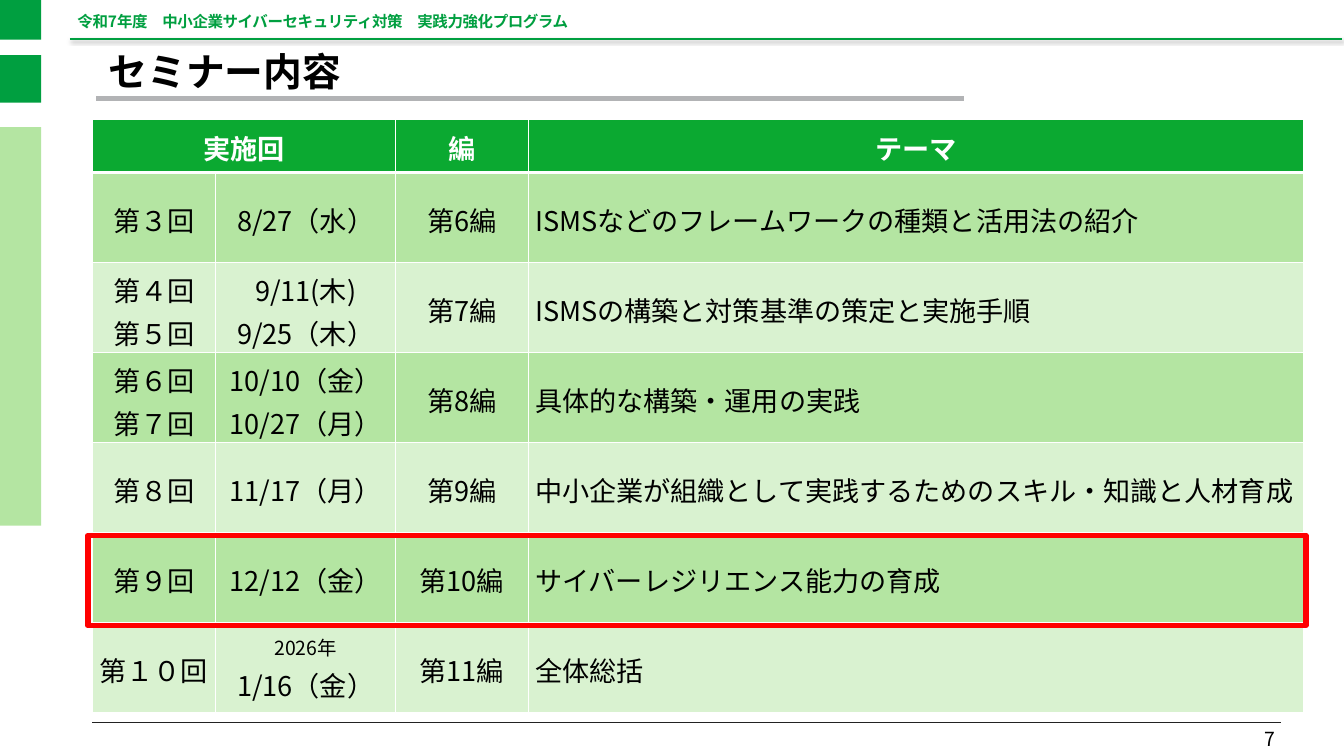
from dataclasses import dataclass
from lxml.etree import SubElement
from pptx import Presentation
from pptx.dml.color import RGBColor as RGB
from pptx.enum.shapes import MSO_CONNECTOR as Conn, MSO_SHAPE as Shape
from pptx.enum.text import MSO_ANCHOR as Anchor, PP_ALIGN as Align
from pptx.oxml.ns import qn
from pptx.util import Inches, Pt


@dataclass(frozen=True)
class Theme:
    font: str = "Noto Sans CJK JP"
    green: str = "009F40"
    header: str = "0BA931"
    band: str = "B4E5A2"
    pale: str = "D9F2D0"
    gray: str = "B2B3B5"
    rule: str = "222222"
    red: str = "FF0000"
    black: str = "000000"
    white: str = "FFFFFF"
    title: int = 40
    body: int = 28
    small: int = 20
    caption: int = 16


class Deck:
    def __init__(self, prs, theme):
        self.theme = theme
        self.s = prs.slides.add_slide(prs.slide_layouts[6])

    def fill_text(self, tf, lines, size, color, bold=False, spacing=None, **para):
        tf.word_wrap = True
        for i, line in enumerate(lines):
            text, sz = line if isinstance(line, tuple) else (line, size)
            p = tf.paragraphs[0] if i == 0 else tf.add_paragraph()
            for name, value in para.items():
                setattr(p, name, value)
            r = p.add_run()
            r.text = text
            for name, value in {"size": Pt(sz), "bold": bold, "name": self.theme.font}.items():
                setattr(r.font, name, value)
            r.font.color.rgb = RGB.from_string(color)
            rpr = r._r.get_or_add_rPr()
            SubElement(rpr, qn("a:ea"), typeface=self.theme.font)
            if spacing is not None:
                rpr.set("spc", str(spacing))

    def text(self, box, line, size, color, anchor, margins=None, **style):
        tf = self.s.shapes.add_textbox(*map(Inches, box)).text_frame
        tf.vertical_anchor = anchor
        for name, value in (margins or {}).items():
            setattr(tf, f"margin_{name}", Inches(value))
        self.fill_text(tf, [line], size, color, **style)

    def line(self, x1, x2, y, color, width, shadow=False):
        c = self.s.shapes.add_connector(Conn.STRAIGHT, *map(Inches, (x1, y, x2, y)))
        c.line.color.rgb = RGB.from_string(color)
        c.line.width = Pt(width)
        effects = SubElement(c._element.spPr, qn("a:effectLst"))
        if shadow:
            shade = SubElement(effects, qn("a:outerShdw"), blurRad=str(Pt(4)),
                               dist=str(Pt(3)), dir="2700000")
            black = SubElement(shade, qn("a:srgbClr"), val=self.theme.black)
            SubElement(black, qn("a:alpha"), val="40000")

    def rect(self, box, fill=None, line=None, width=0):
        sp = self.s.shapes.add_shape(Shape.RECTANGLE, *map(Inches, box))
        sp.shadow.inherit = False
        for fmt, color in ((sp.fill, fill), (sp.line.fill, line)):
            if color:
                fmt.solid()
                fmt.fore_color.rgb = RGB.from_string(color)
            else:
                fmt.background()
        if line:
            sp.line.width = Pt(width)

    def cell(self, cell, lines, fill, color, bold, align, top, bottom):
        tcPr = cell._tc.get_or_add_tcPr()
        for side, width in {"L": 1, "R": 1, "T": top, "B": bottom}.items():
            ln = SubElement(tcPr, qn(f"a:ln{side}"), w=str(Pt(width)))
            SubElement(SubElement(ln, qn("a:solidFill")), qn("a:srgbClr"), val=self.theme.white)
        cell.fill.solid()
        cell.fill.fore_color.rgb = RGB.from_string(fill)
        cell.vertical_anchor = Anchor.MIDDLE
        self.fill_text(cell.text_frame, lines, self.theme.body, color, bold,
                       alignment=align, line_spacing=1.1)

    def table(self, left, top, widths, heights, rows):
        t = self.theme
        box = (left, top, sum(widths), sum(heights))
        tbl = self.s.shapes.add_table(len(rows), len(widths), *map(Inches, box)).table
        tbl.horz_banding = False
        for col, width in zip(tbl.columns, widths):
            col.width = Inches(width)
        for row, height in zip(tbl.rows, heights):
            row.height = Inches(height)
        for i, row in enumerate(rows):
            head = i == 0
            fill = t.header if head else t.band if i % 2 else t.pale
            for j, lines in enumerate(row):
                align = Align.CENTER if head or j < 3 else Align.LEFT
                self.cell(tbl.cell(i, j), lines, fill, t.white if head else t.black, head,
                          align, 3 if i == 1 else 1, 3 if head else 1)
        tbl.cell(0, 0).merge(tbl.cell(0, 1))


def main():
    prs = Presentation()
    prs.slide_width, prs.slide_height = Inches(19.26), Inches(10.83)
    t = Theme()
    deck = Deck(prs, t)

    deck.line(1, 19.23, 0.56, t.green, 2, shadow=True)
    deck.line(1.32, 18.36, 10.35, t.rule, 1)
    deck.line(1.38, 13.81, 1.41, t.gray, 6)
    for top, height, color in ((0, 0.57, t.green), (0.79, 0.68, t.green), (1.82, 5.71, t.band)):
        deck.rect((0, top, 0.59, height), fill=color)

    deck.text((1.1, 0.22, 17.48, 0.22), "令和7年度　中小企業サイバーセキュリティ対策　実践力強化プログラム",
              t.caption, t.green, Anchor.TOP, {"left": 0.01, "top": 0.01, "right": 0, "bottom": 0},
              bold=True, spacing=-40, line_spacing=Pt(15))
    deck.text((14.05, 10.22, 4.33, 0.58), "7", t.small, t.black, Anchor.BOTTOM,
              alignment=Align.RIGHT)
    deck.text((1.46, 0.76, 16.34, 0.61), "セミナー内容", t.title, t.black, Anchor.MIDDLE,
              bold=True, line_spacing=0.9, space_before=Pt(10))

    rows = [
        [["実施回"], [], ["編"], ["テーマ"]],
        [["第３回"], ["8/27（水）"], ["第6編"], ["ISMSなどのフレームワークの種類と活用法の紹介"]],
        [["第４回", "第５回"], ["9/11(木)", "9/25（木）"], ["第7編"],
         ["ISMSの構築と対策基準の策定と実施手順"]],
        [["第６回", "第７回"], ["10/10（金）", "10/27（月）"], ["第8編"],
         ["具体的な構築・運用の実践"]],
        [["第８回"], ["11/17（月）"], ["第9編"],
         ["中小企業が組織として実践するためのスキル・知識と人材育成"]],
        [["第９回"], ["12/12（金）"], ["第10編"], ["サイバーレジリエンス能力の育成"]],
        [["第１０回"], [("2026年", t.small), "1/16（金）"], ["第11編"], ["全体総括"]],
    ]
    deck.table(1.32, 1.71, [1.77, 2.58, 1.9, 11.11], [0.76] + [1.29] * 6, rows)
    deck.rect((1.26, 7.67, 17.45, 1.29), line=t.red, width=6)
    prs.save("out.pptx")


if __name__ == "__main__":
    main()
